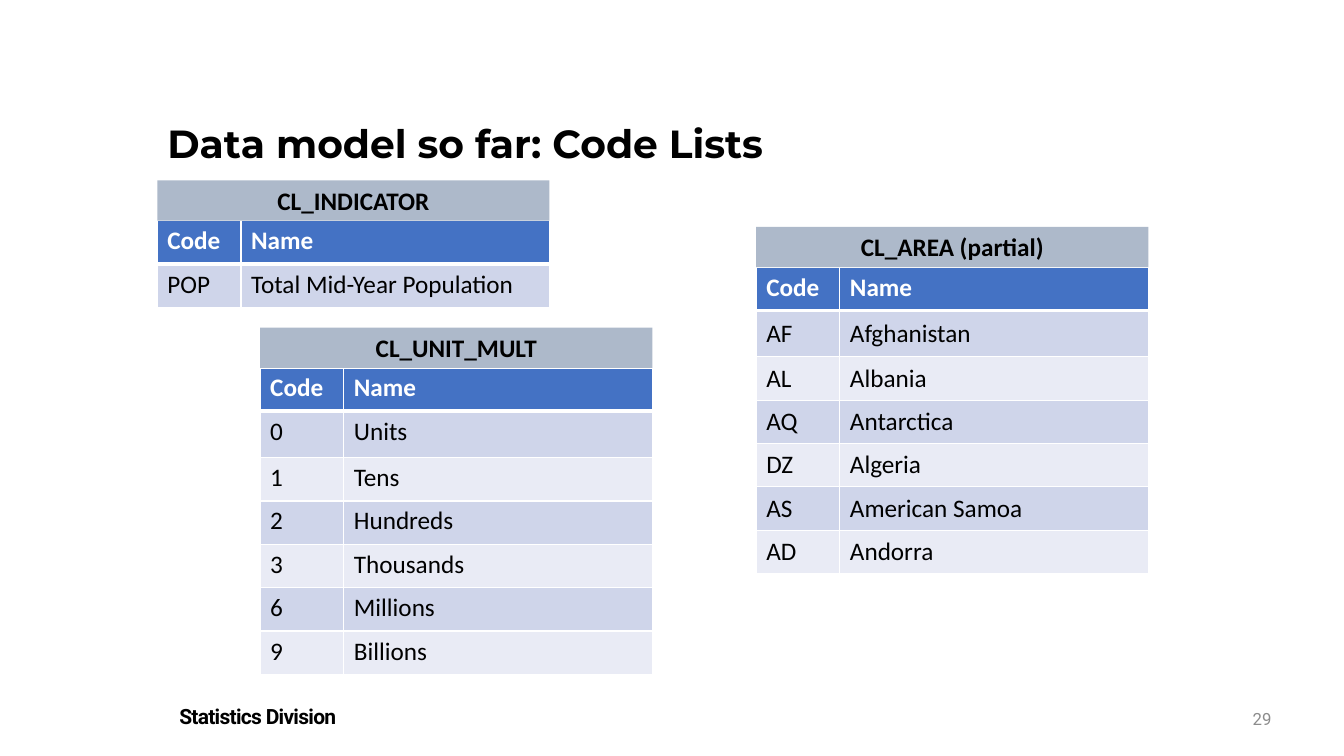
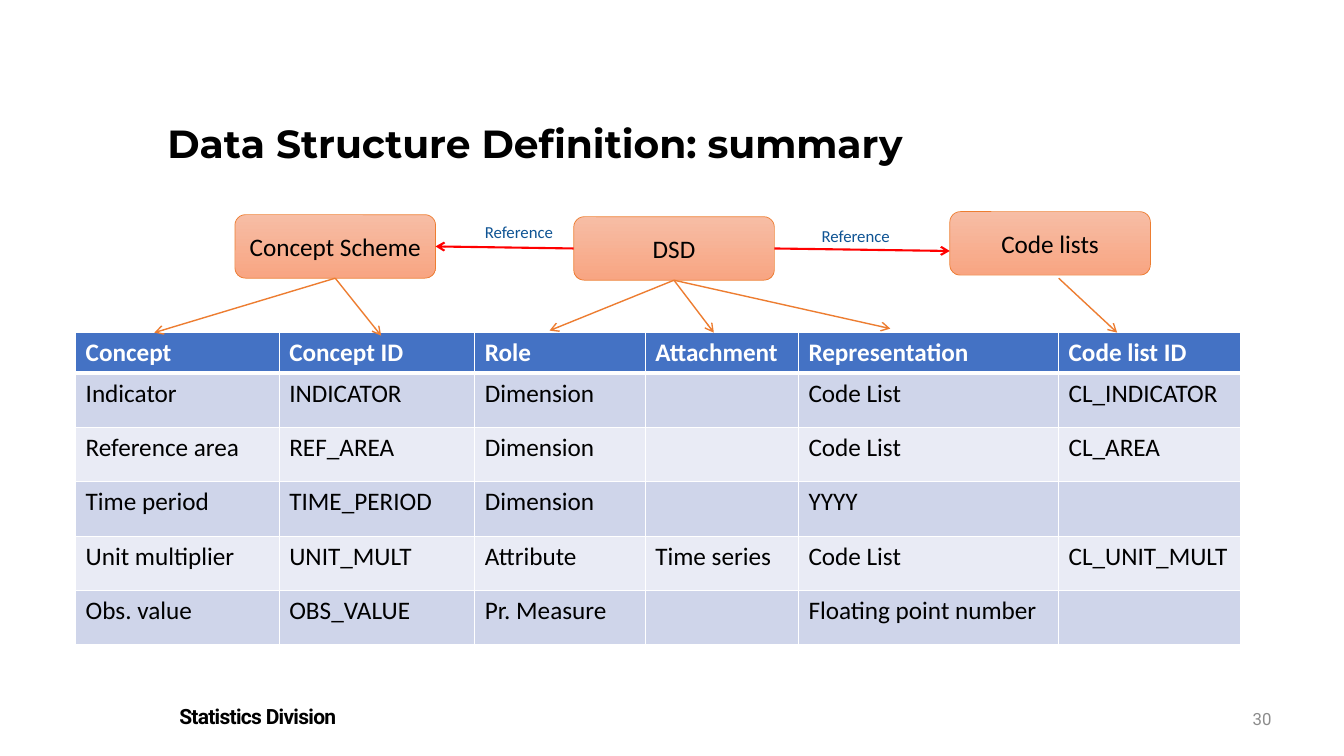
from dataclasses import dataclass
from itertools import accumulate

from lxml import etree
from pptx import Presentation
from pptx import util as u
from pptx.dml.color import RGBColor
from pptx.enum import shapes, text
from pptx.oxml.ns import qn


@dataclass(frozen=True)
class Theme:
    black: str = "000000"
    white: str = "FFFFFF"
    header: str = "4472C4"
    odd_row: str = "CFD5EA"
    even_row: str = "E9EBF5"
    caption: str = "ADB9CA"
    number: str = "8C8C8C"
    box_top: str = "F7BDA5"
    box_bottom: str = "F8A582"
    link: str = "ED7D31"
    reference: str = "FF0000"
    reference_label: str = "0F5494"
    title_font: str = "Montserrat"
    footer_font: str = "Roboto"
    body_font: str = "Calibri"
    title_size: int = 28
    body_size: int = 18
    footer_size: int = 15
    small_size: int = 12


THEME = Theme()
LEFT, CENTER, RIGHT = text.PP_ALIGN.LEFT, text.PP_ALIGN.CENTER, text.PP_ALIGN.RIGHT
TOP, MIDDLE = text.MSO_ANCHOR.TOP, text.MSO_ANCHOR.MIDDLE
BOTTOM_SIDE, LEFT_SIDE, RIGHT_SIDE = 2, 1, 3
CAPTION_HEIGHT = 40

CODE_LISTS = [
    ("CL_INDICATOR", 156, 179, TOP, [("POP", "Total Mid-Year Population")]),
    ("CL_UNIT_MULT", 258, 325, TOP, [
        ("0", "Units"), ("1", "Tens"), ("2", "Hundreds"),
        ("3", "Thousands"), ("6", "Millions"), ("9", "Billions")]),
    ("CL_AREA (partial)", 750, 225, MIDDLE, [
        ("AF", "Afghanistan"), ("AL", "Albania"), ("AQ", "Antarctica"),
        ("DZ", "Algeria"), ("AS", "American Samoa"), ("AD", "Andorra")]),
]

STRUCTURE = [
    ("Concept", "Concept ID", "Role", "Attachment", "Representation", "Code list ID"),
    ("Indicator", "INDICATOR", "Dimension", "", "Code List", "CL_INDICATOR"),
    ("Reference area", "REF_AREA", "Dimension", "", "Code List", "CL_AREA"),
    ("Time period", "TIME_PERIOD", "Dimension", "", "YYYY", ""),
    ("Unit multiplier", "UNIT_MULT", "Attribute", "Time series", "Code List", "CL_UNIT_MULT"),
    ("Obs. value", "OBS_VALUE", "Pr. Measure", "", "Floating point number", ""),
]


def px(length):
    return u.Emu(length * 9144)


def rgb(color):
    return RGBColor.from_string(color)


def write(frame, words, size=THEME.body_size, color=THEME.black, font=THEME.body_font,
          bold=False, align=LEFT, anchor=TOP):
    frame.text = words
    frame.word_wrap = True
    frame.vertical_anchor = anchor
    style(frame.paragraphs[0], size, color, font, bold, align)


def style(paragraph, size, color, font, bold, align):
    paragraph.alignment = align
    for run in paragraph.runs:
        run.font.size = u.Pt(size)
        run.font.name = font
        run.font.bold = bold
        run.font.color.rgb = rgb(color)


def add_label(slide, words, left, top, width, height, fill=None, **look):
    label = slide.shapes.add_textbox(px(left), px(top), px(width), px(height))
    if fill:
        label.fill.solid()
        label.fill.fore_color.rgb = rgb(fill)
    write(label.text_frame, words, **look)
    return label


def add_slide(prs, title, title_height, number):
    slide = prs.slides.add_slide(prs.slide_layouts[5])
    heading = slide.shapes.title
    heading.left, heading.top = px(156), px(119)
    heading.width, heading.height = px(1086), px(title_height)
    write(heading.text_frame, title, THEME.title_size, font=THEME.title_font, bold=True)
    heading.text_frame.auto_size = text.MSO_AUTO_SIZE.NONE
    heading.text_frame.paragraphs[0].line_spacing = 0.9

    division = add_label(slide, "Statistics Division", 168, 693, 584, 35, THEME.white,
                         size=THEME.footer_size, font=THEME.footer_font, bold=True)
    division_run = division.text_frame.paragraphs[0].runs[0]
    division_run.font._element.set("spc", "-50")
    add_label(slide, str(number), 1207, 693, 64, 40, size=THEME.small_size,
              color=THEME.number, font=THEME.footer_font, align=RIGHT, anchor=MIDDLE)
    return slide


def set_borders(cell, top, bottom):
    properties = cell._tc.get_or_add_tcPr()
    for side, points in (("L", 1), ("R", 1), ("T", top), ("B", bottom)):
        border = etree.SubElement(properties, qn(f"a:ln{side}"), w=str(u.Pt(points)))
        fill = etree.SubElement(border, qn("a:solidFill"))
        etree.SubElement(fill, qn("a:srgbClr"), val=THEME.white)


def add_grid(slide, rows, left, top, widths, heights, body_anchor=TOP):
    grid = slide.shapes.add_table(len(rows), len(widths), px(left), px(top),
                                  px(sum(widths)), px(sum(heights))).table
    for column, width in zip(grid.columns, widths):
        column.width = px(width)
    for index, (row, height, entries) in enumerate(zip(grid.rows, heights, rows)):
        row.height = px(height)
        is_header = index == 0
        fill = THEME.header if is_header else (THEME.even_row, THEME.odd_row)[index % 2]
        for cell, entry in zip(row.cells, entries):
            set_borders(cell, 3 if index == 1 else 1, 3 if is_header else 1)
            cell.fill.solid()
            cell.fill.fore_color.rgb = rgb(fill)
            cell.text = entry
            cell.vertical_anchor = TOP if is_header else body_anchor
            style(cell.text_frame.paragraphs[0], THEME.body_size,
                  THEME.white if is_header else THEME.black,
                  THEME.body_font, is_header, LEFT)


def add_code_list(slide, name, left, top, anchor, codes):
    widths = (83, 306)
    heights = [43] * (len(codes) + 1)
    if len(codes) > 1:
        heights[1] = 46
    add_grid(slide, [("Code", "Name"), *codes], left, top + CAPTION_HEIGHT,
             widths, heights, anchor)
    add_label(slide, name, left, top, sum(widths), CAPTION_HEIGHT, THEME.caption,
              bold=True, align=CENTER)


def add_artefact(slide, name, left, top):
    box = slide.shapes.add_shape(shapes.MSO_SHAPE.ROUNDED_RECTANGLE,
                                 px(left), px(top), px(199), px(63))
    box.shadow.inherit = False
    box.fill.gradient()
    box.fill.gradient_angle = 270
    for stop, color in zip(box.fill.gradient_stops, (THEME.box_top, THEME.box_bottom)):
        stop.color.rgb = rgb(color)
    box.line.color.rgb = rgb(THEME.link)
    box.line.width = u.Pt(0.5)
    write(box.text_frame, name, align=CENTER, anchor=MIDDLE)
    return box


def add_arrow(slide, start, end, color=THEME.link, points=1.0, source=None, target=None):
    arrow = slide.shapes.add_connector(shapes.MSO_CONNECTOR.STRAIGHT,
                                       *map(px, (*start, *end)))
    arrow.line.color.rgb = rgb(color)
    arrow.line.width = u.Pt(points)
    properties = arrow.element.spPr
    etree.SubElement(properties.find(qn("a:ln")), qn("a:tailEnd"), type="arrow")
    etree.SubElement(properties, qn("a:effectLst"))
    if source:
        arrow.begin_connect(*source)
    if target:
        arrow.end_connect(*target)


def build_code_lists(prs):
    slide = add_slide(prs, "Data model so far: Code Lists", 56, 29)
    for code_list in CODE_LISTS:
        add_code_list(slide, *code_list)


def build_summary(prs):
    slide = add_slide(prs, "Data Structure Definition: summary", 91, 30)
    add_grid(slide, STRUCTURE, 75, 330, (202, 194, 169, 152, 258, 181), [38] + [54] * 5)

    scheme = add_artefact(slide, "Concept Scheme", 233, 213)
    dsd = add_artefact(slide, "DSD", 569, 215)
    add_artefact(slide, "Code lists", 942, 210)

    for end in ((153, 330), (378, 333)):
        add_arrow(slide, (333, 276), end, source=(scheme, BOTTOM_SIDE))
    for end in ((545, 328), (708, 330), (883, 326)):
        add_arrow(slide, (668, 278), end, source=(dsd, BOTTOM_SIDE))
    add_arrow(slide, (1050, 276), (1108, 330))

    add_arrow(slide, (569, 247), (432, 244), THEME.reference, 1.5,
              (dsd, LEFT_SIDE), (scheme, RIGHT_SIDE))
    add_arrow(slide, (768, 247), (942, 249), THEME.reference, 1.5, (dsd, RIGHT_SIDE))
    for left, top in ((471, 215), (805, 219)):
        add_label(slide, "Reference", left, top, 98, 30,
                  size=THEME.small_size, color=THEME.reference_label)


def main():
    prs = Presentation()
    prs.slide_width, prs.slide_height = px(1333), px(750)
    build_code_lists(prs)
    build_summary(prs)
    prs.save("out.pptx")


if __name__ == "__main__":
    main()
